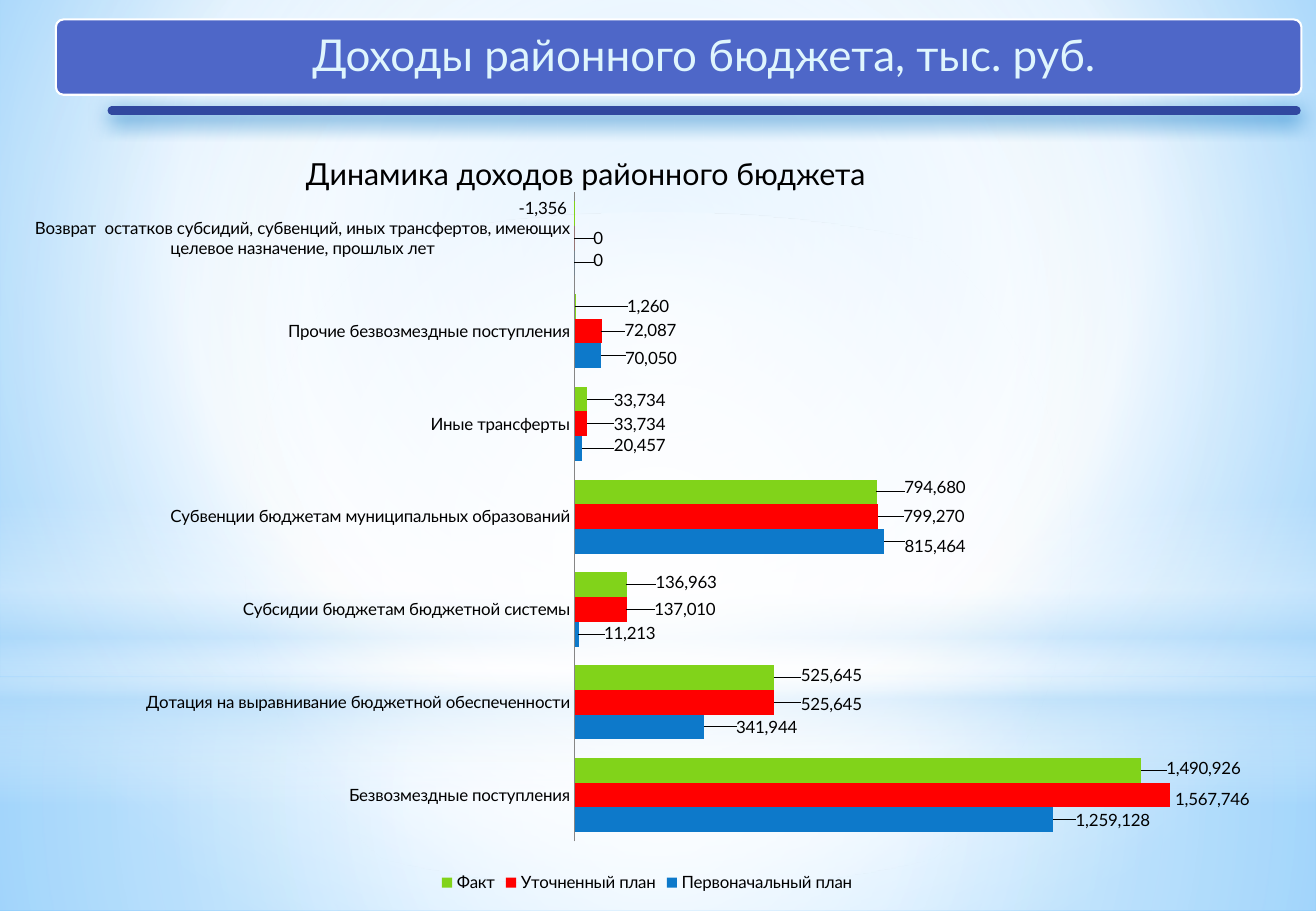
"""Builds the slide on district budget revenue with its bar chart."""
from lxml import etree
from pptx import Presentation
from pptx.chart.data import CategoryChartData
from pptx.dml.color import RGBColor
from pptx.enum.chart import XL_CHART_TYPE, XL_LABEL_POSITION, XL_LEGEND_POSITION, XL_TICK_MARK
from pptx.enum.dml import MSO_FILL
from pptx.enum.shapes import MSO_CONNECTOR, MSO_SHAPE
from pptx.enum.text import MSO_ANCHOR, MSO_AUTO_SIZE, PP_ALIGN
from pptx.oxml import parse_xml
from pptx.oxml.ns import nsdecls, qn
from pptx.util import Inches, Pt

RECT, OVAL, ROUNDED = MSO_SHAPE.RECTANGLE, MSO_SHAPE.OVAL, MSO_SHAPE.ROUNDED_RECTANGLE
BAR, OUTSIDE, BOTTOM = XL_CHART_TYPE.BAR_CLUSTERED, XL_LABEL_POSITION.OUTSIDE_END, XL_LEGEND_POSITION.BOTTOM
NO_TICK, STRAIGHT, GRADIENT = XL_TICK_MARK.NONE, MSO_CONNECTOR.STRAIGHT, MSO_FILL.GRADIENT
MIDDLE, LEFT, FIXED = MSO_ANCHOR.MIDDLE, PP_ALIGN.LEFT, MSO_AUTO_SIZE.NONE

THEME = {
    "font": "Lato", "title_size": 26, "heading_size": 18, "chart_size": 10,
    "title": "DFF5FD", "text": "000000", "banner": "4E67C8", "edge": "FFFFFF",
    "rule": "31489F", "glow": "0070C0", "axis": "868686",
    "plan": "0D79CA", "revised": "FF0000", "actual": "81D31A",
    "white": "FFFFFF", "sky": "B4DCFA", "core": "9ED5FF", "rim": "5BB9FF",
}
W, H = 10.83, 7.5
NUMBER = "#,##0"
CENTRE = (50, 50, 50, 50)


def set_gradient(fill, stops, to=None):
    """Fill with (position, colour, opacity) stops, circular when given a focus."""
    fill.gradient()
    grad = fill._xPr.find(qn("a:gradFill"))
    gs = "".join(
        f'<a:gs pos="{pos * 1000}"><a:srgbClr val="{THEME[color]}">'
        f'<a:alpha val="{alpha * 1000}"/></a:srgbClr></a:gs>' for pos, color, alpha in stops)
    shade = '<a:lin ang="5400000" scaled="0"/>'
    if to:
        sides = " ".join(f'{side}="{share * 1000}"' for side, share in zip("ltrb", to))
        shade = f'<a:path path="circle"><a:fillToRect {sides}/></a:path>'
    grad.getparent().replace(grad, parse_xml(
        f'<a:gradFill {nsdecls("a")} rotWithShape="1"><a:gsLst>{gs}</a:gsLst>{shade}</a:gradFill>'))


def set_font(font, size, color):
    """Apply the theme typeface, a size and a theme colour."""
    font.name, font.size, font.bold = THEME["font"], Pt(THEME[size]), False
    font.color.rgb = RGBColor.from_string(THEME[color])


prs = Presentation()
prs.slide_width, prs.slide_height = Inches(W), Inches(H)
s = prs.slides.add_slide(prs.slide_layouts[5])
set_gradient(s.background.fill, [(0, "core", 100), (60, "white", 100), (100, "rim", 100)], (20, 10, 20, 60))

HORIZON = 0.744
glows = [
    (RECT, HORIZON, 1 - HORIZON, [(0, "white", 91), (37, "white", 76), (100, "sky", 79)], CENTRE),
    (RECT, 0, HORIZON, [(0, "white", 89), (48, "white", 62), (100, "sky", 79)], CENTRE),
    (RECT, 0.55, 1 / 3, [(0, "white", 0), (29, "white", 30), (45, "sky", 40),
                         (55, "white", 26), (65, "sky", 60), (100, "white", 0)], None),
    (OVAL, 0.233, HORIZON, [(0, "white", 100), (56, "white", 0)], CENTRE),
]
for kind, top, height, stops, focus in glows:
    sp = s.shapes.add_shape(kind, 0, Inches(top * H), Inches(W), Inches(height * H))
    sp.shadow.inherit = False
    sp.line.fill.background()
    set_gradient(sp.fill, stops, focus)

BANNER_TOP, BANNER_HEIGHT = Inches(0.16), Inches(0.62)
banner = s.shapes.add_shape(ROUNDED, Inches(0.46), BANNER_TOP, Inches(10.25), BANNER_HEIGHT)
banner.adjustments[0] = 0.1
banner.shadow.inherit = False
banner.fill.solid()
banner.fill.fore_color.rgb = RGBColor.from_string(THEME["banner"])
banner.line.color.rgb = RGBColor.from_string(THEME["edge"])
banner.line.width = Pt(1.25)

title = s.shapes.title
title.left, title.top, title.width, title.height = Inches(2.57), BANNER_TOP, Inches(8.14), BANNER_HEIGHT
tf = title.text_frame
tf.text = "Доходы районного бюджета, тыс. руб."
tf.auto_size, tf.vertical_anchor, tf.word_wrap = FIXED, MIDDLE, True
tf.margin_left, tf.margin_right = 0, Inches(0.79)
tf.margin_top = tf.margin_bottom = Inches(0.11)
p = tf.paragraphs[0]
p.alignment, p.line_spacing = LEFT, 0.9
set_font(p.runs[0].font, "title_size", "title")
s.shapes._spTree.append(title._element)

rule = s.shapes.add_connector(STRAIGHT, Inches(0.92), Inches(0.91), Inches(10.67), Inches(0.91))
rule.line.color.rgb = RGBColor.from_string(THEME["rule"])
rule.line.width = Pt(5)
rule.line._get_or_add_ln().set("cap", "rnd")
rule._element.spPr.append(parse_xml(
    f'<a:effectLst {nsdecls("a")}><a:outerShdw blurRad="{Pt(12)}" dist="{Pt(4)}" dir="5400000">'
    f'<a:srgbClr val="{THEME["glow"]}"/></a:outerShdw></a:effectLst>'))

data = CategoryChartData(number_format=NUMBER)
data.categories = [
    "Безвозмездные поступления",
    "Дотация на выравнивание бюджетной обеспеченности",
    "Субсидии бюджетам бюджетной системы",
    "Субвенции бюджетам муниципальных образований",
    "Иные трансферты",
    "Прочие безвозмездные поступления",
    "Возврат  остатков субсидий, субвенций, иных трансфертов, имеющих целевое назначение, прошлых лет",
]
# Label shifts are thousandths of the chart's width and height.
revenue = [
    ("Первоначальный план", "plan", [1259128, 341944, 11213, 815464, 20457, 70050, 0],
     [(14, 0), (21, 0), (16, -1), (12, 7), (21, -5), (15, 3), (11, -4)]),
    ("Уточненный план", "revised", [1567746, 525645, 137010, 799270, 33734, 72087, 0],
     [(0, 5), (17, 3), (18, 0), (16, 0), (17, 0), (14, -1), (11, 0)]),
    ("Факт", "actual", [1490926, 525645, 136963, 794680, 33734, 1260, -1356],
     [(16, -3), (17, -4), (19, -4), (18, -7), (17, 2), (37, 0), (-2, -7)]),
]
for name, color, values, shifts in revenue:
    data.add_series(name, values)
chart = s.shapes.add_chart(BAR, Inches(0.06), Inches(1.4), Inches(10.53), Inches(5.99), data).chart
set_font(chart.font, "chart_size", "text")
chart.has_title = False
chart.has_legend = True
chart.legend.position = BOTTOM
chart.legend.include_in_layout = False

axis = chart.value_axis
axis.minimum_scale, axis.maximum_scale = -200000, 1800000
axis.has_major_gridlines = axis.visible = False
axis = chart.category_axis
axis.major_tick_mark = axis.minor_tick_mark = NO_TICK
axis.format.line.color.rgb = RGBColor.from_string(THEME["axis"])
axis.format.line.width = Pt(0.75)

plot = chart.plots[0]
plot.gap_width, plot.overlap, plot.vary_by_categories = 75, 0, False
frame = [("layoutTarget", "inner"), ("xMode", "edge"), ("yMode", "edge"),
         ("x", 0.384), ("y", 0.03), ("w", 0.594), ("h", 0.893)]
area = chart._chartSpace.chart.plotArea
for old in area.findall(qn("c:layout")):
    area.remove(old)
area.insert(0, etree.Element(qn("c:layout")))
manual = etree.SubElement(area[0], qn("c:manualLayout"))
for tag, value in frame:
    etree.SubElement(manual, qn(f"c:{tag}")).set("val", str(value))

for ser, (name, color, values, shifts) in zip(plot.series, revenue):
    ser.format.fill.solid()
    ser.format.fill.fore_color.rgb = RGBColor.from_string(THEME[color])
    ser.invert_if_negative = False
    labels = ser.data_labels
    labels.show_value, labels.position = True, OUTSIDE
    labels.number_format, labels.number_format_is_linked = NUMBER, False
    for i in range(len(values)):
        ser.points[i].data_label.position = OUTSIDE
    for label, shift in zip(labels._element.findall(qn("c:dLbl")), shifts):
        label.insert(1, etree.Element(qn("c:layout")))
        manual = etree.SubElement(label[1], qn("c:manualLayout"))
        for tag, value in zip("xy", shift):
            etree.SubElement(manual, qn(f"c:{tag}")).set("val", str(value / 1000))

heading = s.shapes.add_textbox(Inches(2.42), Inches(1.23), Inches(5.2), Inches(0.4))
tf = heading.text_frame
tf.word_wrap = True
tf.text = "Динамика доходов районного бюджета"
set_font(tf.paragraphs[0].runs[0].font, "heading_size", "text")

prs.save("out.pptx")
